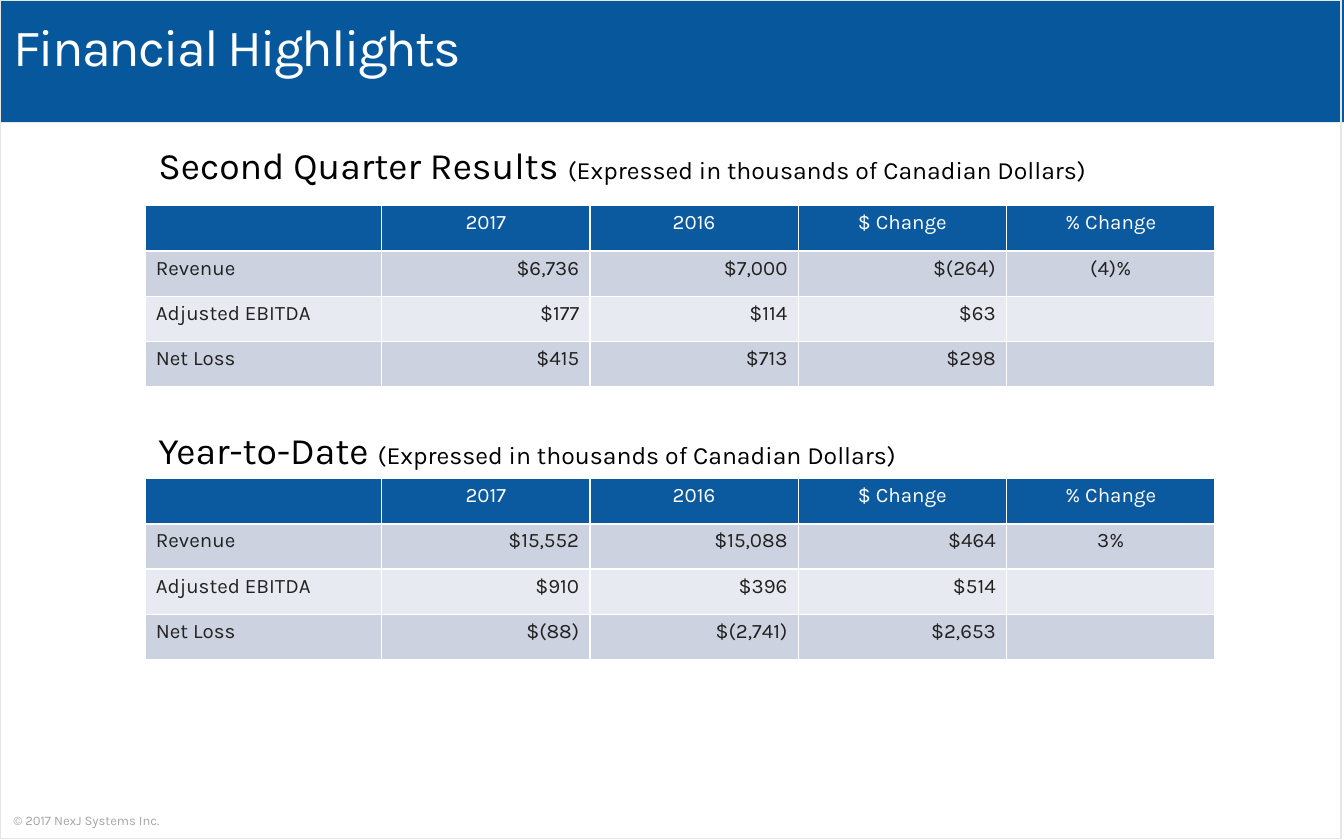
from lxml.etree import SubElement
from pptx import Presentation
from pptx.dml.color import RGBColor
from pptx.enum.shapes import MSO_SHAPE
from pptx.enum.text import MSO_ANCHOR, PP_ALIGN
from pptx.oxml import parse_xml
from pptx.oxml.ns import nsdecls, qn
from pptx.util import Inches, Pt

FONT = "Karla"
BAND_BLUE = RGBColor(0x07, 0x57, 0x9C)
HEADER_BLUE = RGBColor(0x0B, 0x5A, 0x9F)
ROW_DARK = RGBColor(0xCC, 0xD2, 0xDF)
ROW_LIGHT = RGBColor(0xE7, 0xEA, 0xF0)
FRAME_GREY = RGBColor(0xE7, 0xE6, 0xE6)
FOOTER_GREY = RGBColor(0xA6, 0xA6, 0xA6)
INK = RGBColor(0x21, 0x21, 0x21)
BLACK = RGBColor(0, 0, 0)
WHITE = RGBColor(0xFF, 0xFF, 0xFF)

COLUMN_WIDTHS = (1.76, 1.55, 1.55, 1.55, 1.55)
CELL_SIZE = 11
CELL_MARGINS = {"margin_left": Inches(0.08), "margin_right": Inches(0.08),
                "margin_top": Inches(0.04), "margin_bottom": Inches(0.04)}
HEADER = ("", "2017", "2016", "$ Change", "% Change")
UNITS = "(Expressed in thousands of Canadian Dollars)"
SECTIONS = (
    ("Second Quarter Results ", 1.01, 1.53, (
        ("Revenue", "$6,736", "$7,000", "$(264)", "(4)%"),
        ("Adjusted EBITDA", "$177", "$114", "$63", ""),
        ("Net Loss", "$415", "$713", "$298", ""))),
    ("Year-to-Date ", 3.13, 3.56, (
        ("Revenue", "$15,552", "$15,088", "$464", "3%"),
        ("Adjusted EBITDA", "$910", "$396", "$514", ""),
        ("Net Loss", "$(88)", "$(2,741)", "$2,653", ""))),
)


def set_attributes(target, values):
    for name, value in values.items():
        setattr(target, name, value)


def add_run(paragraph, text, size, color):
    run = paragraph.add_run()
    run.text = text
    set_attributes(run.font, {"name": FONT, "size": Pt(size)})
    run.font.color.rgb = color
    return run


def add_text(slide, box, pieces, color, **frame_format):
    """Place one paragraph made of (text, size) pieces in the box."""
    frame = slide.shapes.add_textbox(*map(Inches, box)).text_frame
    set_attributes(frame, {"word_wrap": True, **frame_format})
    paragraph = frame.paragraphs[0]
    for text, size in pieces:
        add_run(paragraph, text, size, color)
    return paragraph


def add_rectangle(slide, box):
    rectangle = slide.shapes.add_shape(MSO_SHAPE.RECTANGLE, *map(Inches, box))
    rectangle.shadow.inherit = False
    return rectangle


def add_background(slide, width, height):
    # Title band
    band = add_rectangle(slide, (0, 0, width, 0.91))
    band.fill.solid()
    band.fill.fore_color.rgb = BAND_BLUE
    band.line.fill.background()

    # Copyright line
    margins = {f"margin_{side}": Inches(0.08) for side in ("left", "right", "top", "bottom")}
    add_text(slide, (0.02, height - 0.29, 2.43, 0.28), [("© 2017 NexJ Systems Inc.", 7)],
             FOOTER_GREY, vertical_anchor=MSO_ANCHOR.MIDDLE, **margins)

    # Thin frame round the slide
    frame = add_rectangle(slide, (0, 0, width - 0.02, height - 0.01))
    frame.fill.background()
    frame.line.color.rgb = FRAME_GREY
    frame.line.width = Pt(1)


def add_title(slide, box):
    title = add_text(slide, box, [("Financial Highlights", 28)], WHITE,
                     vertical_anchor=MSO_ANCHOR.MIDDLE)
    title.line_spacing = 0.9
    title.runs[0].font._element.set("spc", "-100")


def add_cell_borders(cell):
    properties = cell._tc.get_or_add_tcPr()
    for side in ("lnL", "lnR", "lnT", "lnB"):
        properties.append(parse_xml(
            f'<a:{side} {nsdecls("a")} w="{Pt(1)}"><a:solidFill>'
            f'<a:srgbClr val="{WHITE}"/></a:solidFill></a:{side}>'))


def fill_cell(cell, text, fill, color, alignment):
    add_cell_borders(cell)
    cell.fill.solid()
    cell.fill.fore_color.rgb = fill
    set_attributes(cell, CELL_MARGINS)
    paragraph = cell.text_frame.paragraphs[0]
    paragraph.alignment = alignment
    if text:
        add_run(paragraph, text, CELL_SIZE, color)
    else:
        # Keeps an empty cell from stretching its row
        SubElement(paragraph._p, qn("a:endParaRPr"), sz=str(CELL_SIZE * 100))


def add_results_table(slide, box, rows):
    lines = (HEADER, *rows)
    table = slide.shapes.add_table(len(lines), len(HEADER), *map(Inches, box)).table
    for column, width in zip(table.columns, COLUMN_WIDTHS):
        column.width = Inches(width)
    value_alignments = (PP_ALIGN.LEFT, *[PP_ALIGN.RIGHT] * 3, PP_ALIGN.CENTER)
    for row, line in enumerate(lines):
        if row == 0:
            fill, color = HEADER_BLUE, WHITE
            alignments = [PP_ALIGN.CENTER] * len(HEADER)
        else:
            fill, color = (ROW_DARK if row % 2 else ROW_LIGHT), INK
            alignments = value_alignments
        for column, text in enumerate(line):
            fill_cell(table.cell(row, column), text, fill, color, alignments[column])


def add_section(slide, left, heading, heading_top, table_top, rows):
    caption = add_text(slide, (left, heading_top, 7.74, 0.43),
                       [(heading, 20), (UNITS, 13.3)], BLACK)
    caption.space_after = Pt(3)
    add_results_table(slide, (left, table_top, sum(COLUMN_WIDTHS), 1.35), rows)


def main():
    width, height = 10, 6.25
    deck = Presentation()
    set_attributes(deck, {"slide_width": Inches(width), "slide_height": Inches(height)})
    slide = deck.slides.add_slide(deck.slide_layouts[6])
    add_background(slide, width, height)
    add_title(slide, (0, 0.08, 9.88, 0.58))
    for section in SECTIONS:
        add_section(slide, 1.08, *section)
    deck.save("out.pptx")


if __name__ == "__main__":
    main()
